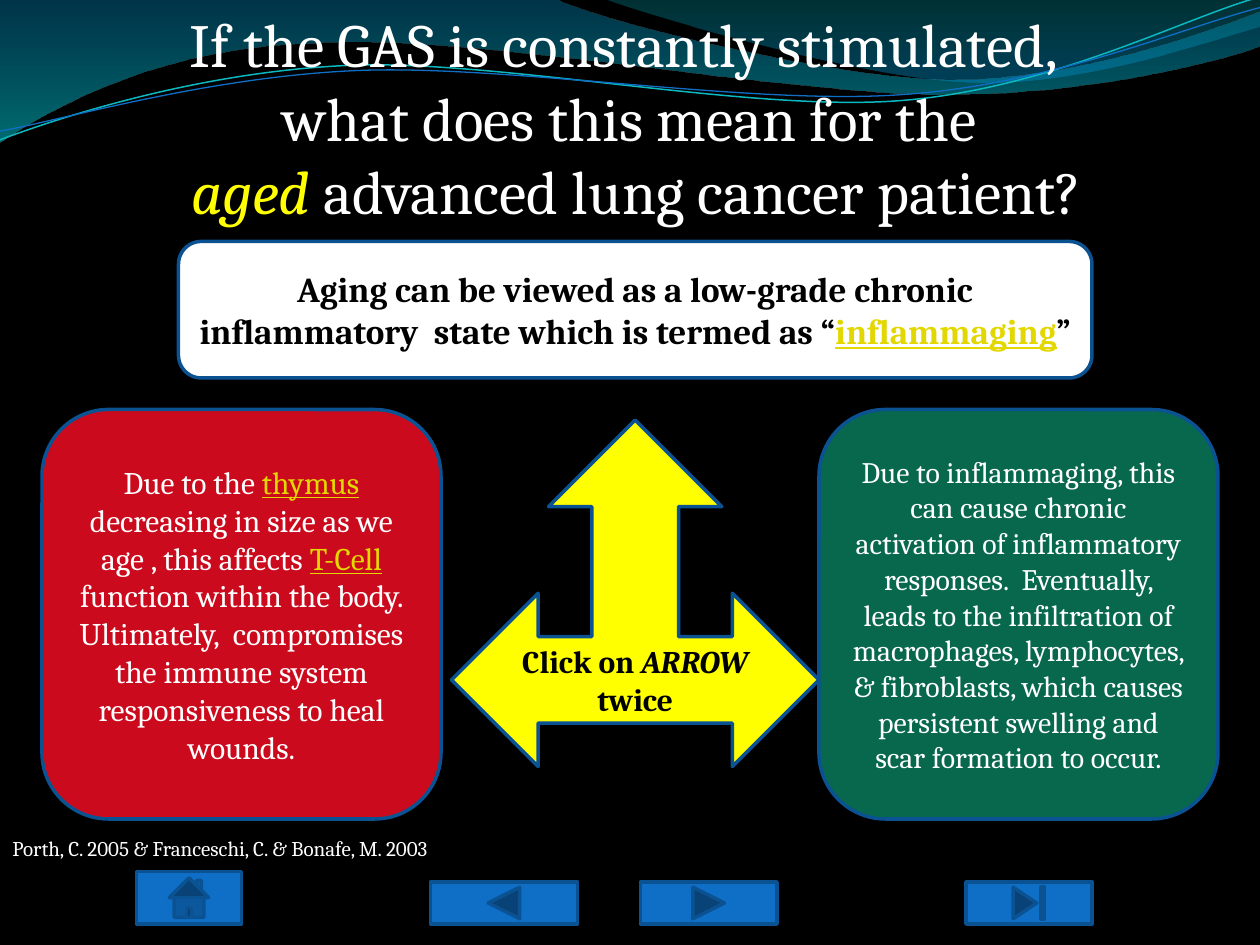
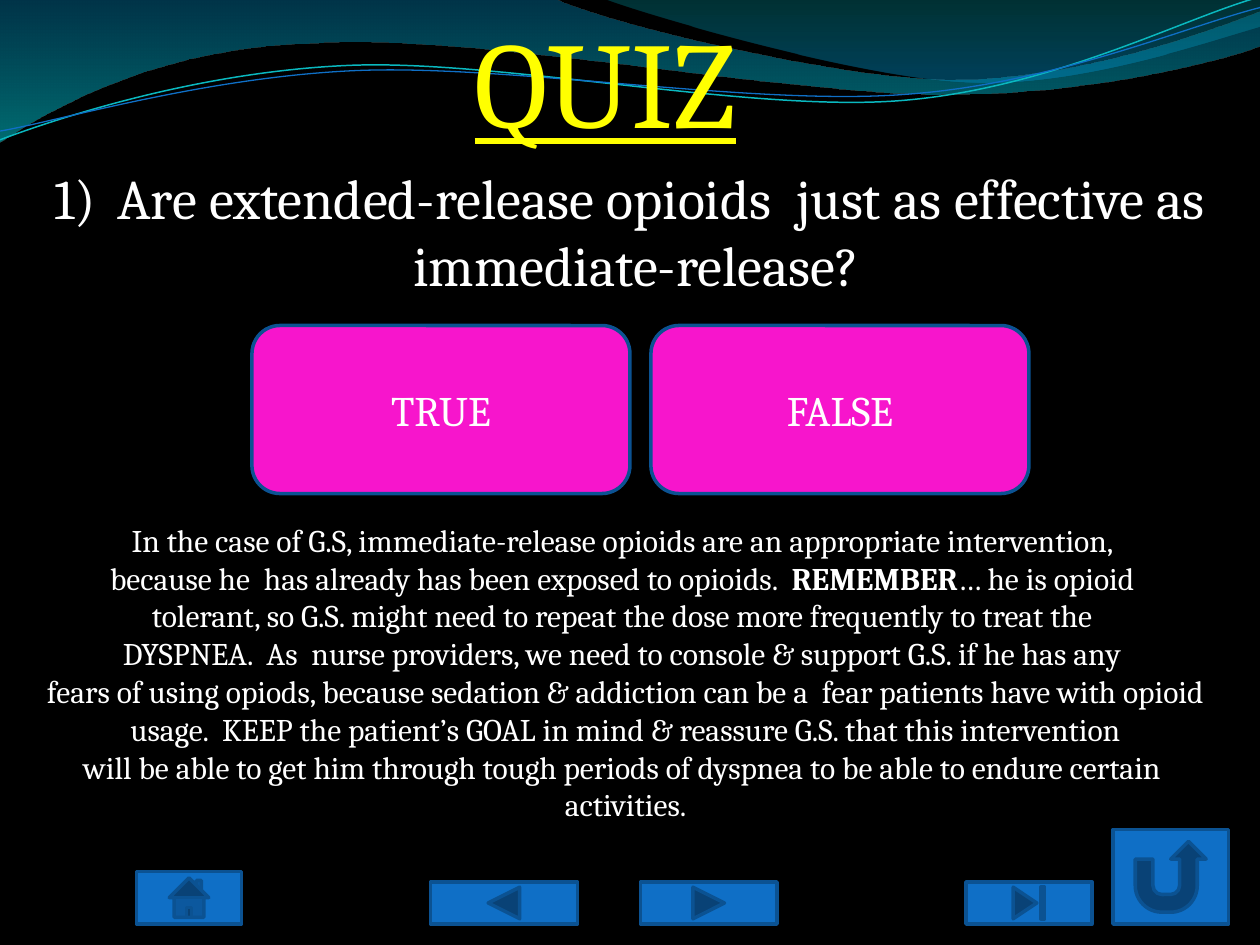
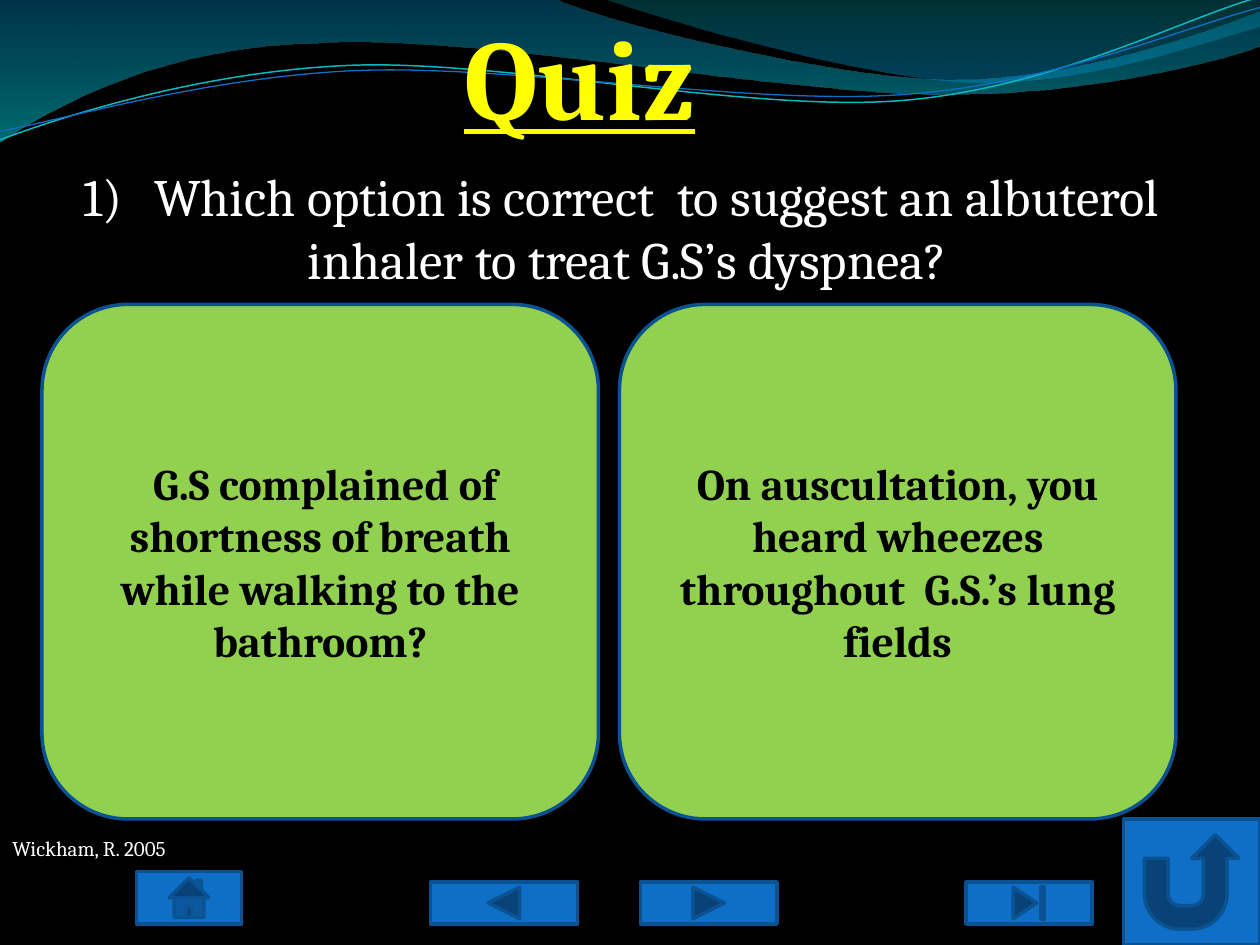
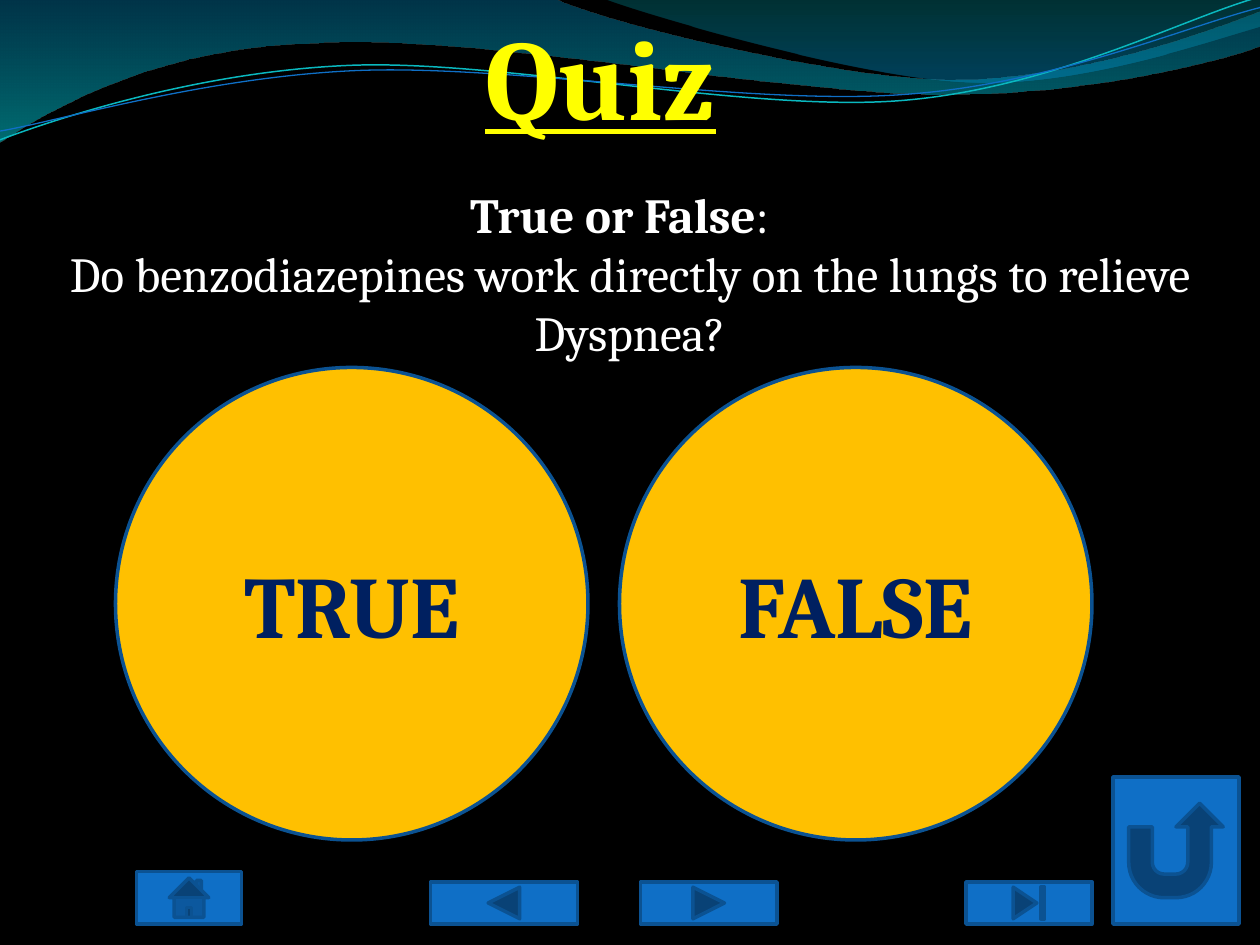
"""Build four nursing slides on lung cancer care: one explainer and three quizzes."""
from pptx import Presentation
from pptx.dml.color import RGBColor
from pptx.enum import shapes as es, text as et
from pptx.oxml import parse_xml
from pptx.oxml.ns import nsdecls, qn
from pptx.oxml.xmlchemy import OxmlElement
from pptx.util import Pt


class Theme:
    font = "Cambria"
    black, white, yellow, gold, navy = "000000", "FFFFFF", "FFFF00", "E2D700", "002060"
    red, green, pink, lime, amber = "CB0B1D", "08684E", "F715CC", "92D050", "FFC000"
    button, outline, aqua = "0F6FC6", "0B5292", "0AB8BF"
    cite, small, body, banner, label, answer = 12, 17, 18, 20, 24, 25
    statement, question, long_question, lead = 28, 30, 32, 35
    verdict, quiz, big_quiz = 50, 65, 70
    outline_width = 2


T = Theme
S = es.MSO_SHAPE
TERM = {"color": T.gold, "underline": True}
HEADING = {"color": T.yellow, "underline": True, "align": "LEFT", "wrap": False}

WAVES = [
    {"start": (0, 0), "close": True, "angle": 90,
     "stops": [(0, "0074A1", 45), (100, "00C6CF", 55)],
     "segments": [(316.8, -0.7), (342.7, 12.2, 478.1, 45.4, 545.8, 45.4),
                  (614.2, 45.4, 689.8, 18.7, 720, 6.5), (720.7, 25.9),
                  (707.8, 31.7, 626.4, 54.7, 537.1, 54),
                  (447.8, 54, 275, 20.2, 185, 24.5),
                  (92.9, 25.9, 33.1, 59.8, -0.7, 81.4)]},
    {"start": (344.9, -0.7), "close": True, "angle": 90,
     "stops": [(0, "00A1A9", 30), (80, "008BBF", 45)],
     "segments": [(366.5, 7.9, 491, 44.6, 553.7, 46.8),
                  (616.3, 49.7, 691.9, 23, 720, 15.1), (720, 0)]},
    {"start": (0, 79.9), "close": False, "line": (T.aqua, 0.85),
     "segments": [(34.6, 67, 113.8, 41, 199.4, 37.4),
                  (284.4, 33.8, 427, 64.1, 513.4, 57.6),
                  (599.8, 51.1, 675.4, 10.8, 718.6, -1.4)]},
    {"start": (0, 74.9), "close": False, "line": (T.button, 0.75),
     "segments": [(33.8, 69.1, 118.1, 43.9, 203.8, 40.3),
                  (290.2, 36.7, 429.8, 60.5, 516.2, 54),
                  (601.9, 48.2, 677.5, 15.1, 720, 4.3)]},
]

NAVIGATION = [
    (S.ACTION_BUTTON_BACK_OR_PREVIOUS, (246, 504, 84, 24)),
    (S.ACTION_BUTTON_FORWARD_OR_NEXT, (366, 504, 78, 24)),
    (S.ACTION_BUTTON_END, (552, 504, 72, 24)),
    (S.ACTION_BUTTON_HOME, (78, 498, 60, 30)),
]

SLIDES = [
    {"title": ((0, 0, 720, 135),
               ["If the GAS is constantly stimulated, ",
                "what does this mean for the",
                [(" aged ", {"color": T.yellow, "italic": True}),
                 ("advanced lung cancer patient?", {})]],
               {"size": T.lead}),
     "texts": [((0, 474, 278, 22), ["Porth, C. 2005 & Franceschi, C. & Bonafe, M. 2003"],
                {"size": T.cite, "align": "LEFT", "wrap": False})],
     "cards": [
         (S.ROUNDED_RECTANGLE, (102, 138, 522, 78), T.white,
          [[("Aging can be viewed as a low-grade chronic inflammatory  state "
             "which is termed as “", {}), ("inflammaging", TERM), ("”", {})]],
          {"size": T.banner, "color": T.black, "bold": True}),
         (S.ROUNDED_RECTANGLE, (24, 234, 228, 234), T.red,
          [[("Due to the ", {}), ("thymus ", TERM),
            ("decreasing in size as we age , this affects ", {}), ("T-Cell", TERM),
            (" function within the body. Ultimately,  compromises the immune "
             "system responsiveness to heal wounds.", {})]],
          {"size": T.body}),
         (S.ROUNDED_RECTANGLE, (468, 234, 228, 234), T.green,
          ["Due to inflammaging, this can cause chronic activation of inflammatory "
           "responses.  Eventually, leads to the infiltration of macrophages, "
           "lymphocytes, & fibroblasts, which causes persistent swelling and scar "
           "formation to occur."],
          {"size": T.small}),
         (S.LEFT_RIGHT_UP_ARROW, (258, 240, 210, 198), T.yellow,
          [[("Click on", {}), (" ARROW ", {"italic": True}), ("twice", {})]],
          {"size": T.body, "color": T.black, "bold": True}),
     ]},
    {"title": ((264, 0, 189, 92), ["QUIZ"], {**HEADING, "size": T.big_quiz}),
     "texts": [
         ((0, 90, 720, 158),
          ["Are extended-release opioids  just as effective as", " immediate-release?"],
          {"size": T.long_question, "hanging": 36}),
         ((-2, 294, 719, 181),
          ["In the case of G.S, immediate-release opioids are an appropriate intervention, ",
           [("because he  has already has been exposed to opioids.  ", {}),
            ("REMEMBER", {"bold": True}), ("… he is opioid ", {})],
           "tolerant, so G.S. might need to repeat the dose more frequently to treat the ",
           "DYSPNEA.  As  nurse providers, we need to console & support G.S. if he has any ",
           "fears of using opiods, because sedation & addiction can be a  fear patients "
           "have with opioid",
           " usage.  KEEP the patient’s GOAL in mind & reassure G.S. that this intervention ",
           "will be able to get him through tough periods of dyspnea to be able to endure "
           "certain ",
           "activities."],
          {"size": T.body, "wrap": False}),
     ],
     "answers": {"kind": S.ROUNDED_RECTANGLE, "first": (144, 186, 216, 96), "gap": 12,
                 "fill": T.pink, "choices": ["TRUE", "FALSE"],
                 "look": {"size": T.label}},
     "return": (636, 474, 66, 54)},
    {"title": ((258, 0, 165, 86), ["Quiz"], {**HEADING, "size": T.quiz, "bold": True}),
     "texts": [
         ((23, 90, 671, 80),
          ["Which option is correct  to suggest an albuterol ",
           "inhaler to treat G.S’s dyspnea?"],
          {"size": T.question, "hanging": 40.5, "wrap": False}),
         ((0, 474, 111, 22), ["Wickham, R. 2005"],
          {"size": T.cite, "align": "LEFT", "wrap": False}),
     ],
     "answers": {"kind": S.ROUNDED_RECTANGLE, "first": (24, 174, 318, 294), "gap": 12,
                 "fill": T.lime,
                 "choices": [" G.S complained of shortness of breath while walking to "
                             "the bathroom?",
                             "On auscultation, you heard wheezes throughout  G.S.’s "
                             "lung fields"],
                 "look": {"size": T.answer, "color": T.black, "bold": True}},
     "return": (642, 468, 78, 72)},
    {"title": ((270, 0, 165, 86), ["Quiz"], {**HEADING, "size": T.quiz, "bold": True}),
     "texts": [
         ((0, 102, 720, 109),
          [[("True or False", {"bold": True}), (":  ", {})],
           "Do benzodiazepines work directly on the lungs to relieve Dyspnea?"],
          {"size": T.statement}),
     ],
     "answers": {"kind": S.OVAL, "first": (66, 210, 270, 270), "gap": 18,
                 "fill": T.amber, "choices": ["TRUE", "FALSE"],
                 "look": {"size": T.verdict, "color": T.navy, "bold": True}},
     "return": (636, 444, 72, 84)},
]


def rgb(color):
    return RGBColor.from_string(color)


def points(box):
    return [Pt(length) for length in box]


def write(frame, paragraphs, look):
    """Fill a text frame; a paragraph is a string or a list of (words, format) runs."""
    look = {"color": T.white, "align": "CENTER", **look}
    align, hanging = look.pop("align"), look.pop("hanging", 0)
    frame.word_wrap = look.pop("wrap", True)
    for number, content in enumerate(paragraphs):
        paragraph = frame.add_paragraph() if number else frame.paragraphs[0]
        paragraph.alignment = getattr(et.PP_ALIGN, align)
        if hanging:
            properties = paragraph._p.get_or_add_pPr()
            properties.set("marL", str(Pt(hanging)))
            properties.set("indent", str(-Pt(hanging)))
            if number == 0:
                bullet = OxmlElement("a:buAutoNum")
                bullet.set("type", "arabicParenR")
                properties.append(bullet)
        for words, change in [(content, {})] if isinstance(content, str) else content:
            run = paragraph.add_run()
            run.text = words
            values = {"name": T.font, **look, **change}
            run.font.color.rgb = rgb(values.pop("color"))
            values["size"] = Pt(values["size"])
            for name, value in values.items():
                setattr(run.font, name, value)


def add_text(slide, box, paragraphs, look):
    frame = slide.shapes.add_textbox(*points(box)).text_frame
    write(frame, paragraphs, look)
    frame.auto_size = et.MSO_AUTO_SIZE.SHAPE_TO_FIT_TEXT


def add_title(slide, box, paragraphs, look):
    title = slide.shapes.title
    for side, length in zip(("left", "top", "width", "height"), points(box)):
        setattr(title, side, length)
    write(title.text_frame, paragraphs, look)
    title.text_frame.vertical_anchor = et.MSO_ANCHOR.TOP
    title.text_frame.auto_size = et.MSO_AUTO_SIZE.NONE


def add_card(slide, kind, box, fill, paragraphs=(), look=None):
    card = slide.shapes.add_shape(kind, *points(box))
    card.shadow.inherit = False
    card.fill.solid()
    card.fill.fore_color.rgb = rgb(fill)
    card.line.color.rgb = rgb(T.outline)
    card.line.width = Pt(T.outline_width)
    if paragraphs:
        write(card.text_frame, paragraphs, look)
        card.text_frame.vertical_anchor = et.MSO_ANCHOR.MIDDLE
    return card


def add_wave(slide, wave):
    """Draw a wave, turning each three-point segment into one Bézier curve."""
    builder = slide.shapes.build_freeform(*points(wave["start"]), scale=1.0)
    vertices = [tuple(points(segment[i:i + 2]))
                for segment in wave["segments"] for i in range(0, len(segment), 2)]
    builder.add_line_segments(vertices, close=wave["close"])
    shape = builder.convert_to_shape()
    shape.shadow.inherit = False
    steps = iter(list(shape.element.iter(qn("a:lnTo"))))
    for segment in wave["segments"]:
        group = [next(steps) for _ in range(len(segment) // 2)]
        if len(group) == 3:
            curve = OxmlElement("a:cubicBezTo")
            group[0].addprevious(curve)
            for step in group:
                curve.append(step[0])
                step.getparent().remove(step)
    shape.fill.background()
    if "line" in wave:
        color, width = wave["line"]
        shape.line.color.rgb = rgb(color)
        shape.line.width = Pt(width)
    else:
        shape.line.fill.background()
        stops = "".join(
            f'<a:gs pos="{place * 1000}"><a:srgbClr val="{color}">'
            f'<a:alpha val="{opacity * 1000}"/></a:srgbClr></a:gs>'
            for place, color, opacity in wave["stops"])
        gradient = parse_xml(
            f'<a:gradFill {nsdecls("a")} rotWithShape="1"><a:gsLst>{stops}</a:gsLst>'
            f'<a:lin ang="{wave["angle"] * 60000}" scaled="1"/></a:gradFill>')
        properties = shape.element.spPr
        properties.replace(properties.find(qn("a:noFill")), gradient)
    return shape


def decorate_layout(layout, slide):
    """Draw the waves and navigation once and move them to the shared layout."""
    layout.background.fill.solid()
    layout.background.fill.fore_color.rgb = rgb(T.black)
    decor = [add_wave(slide, wave) for wave in WAVES]
    decor += [add_card(slide, kind, box, T.button) for kind, box in NAVIGATION]
    for number, part in enumerate(decor, 20):
        part.element.nvSpPr.cNvPr.set("id", str(number))
        layout.shapes.element.append(part.element)


def add_answers(slide, answers):
    left, top, width, height = answers["first"]
    for column, choice in enumerate(answers["choices"]):
        box = (left + column * (width + answers["gap"]), top, width, height)
        add_card(slide, answers["kind"], box, answers["fill"], [choice], answers["look"])


def main():
    deck = Presentation()
    deck.slide_width, deck.slide_height = Pt(720), Pt(540)
    layout = deck.slide_layouts.get_by_name("Title Only")
    for number, content in enumerate(SLIDES):
        slide = deck.slides.add_slide(layout)
        if number == 0:
            decorate_layout(layout, slide)
        add_title(slide, *content["title"])
        for text in content["texts"]:
            add_text(slide, *text)
        for card in content.get("cards", []):
            add_card(slide, *card)
        if "answers" in content:
            add_answers(slide, content["answers"])
        if "return" in content:
            add_card(slide, S.ACTION_BUTTON_RETURN, content["return"], T.button)
    deck.save("out.pptx")


if __name__ == "__main__":
    main()
